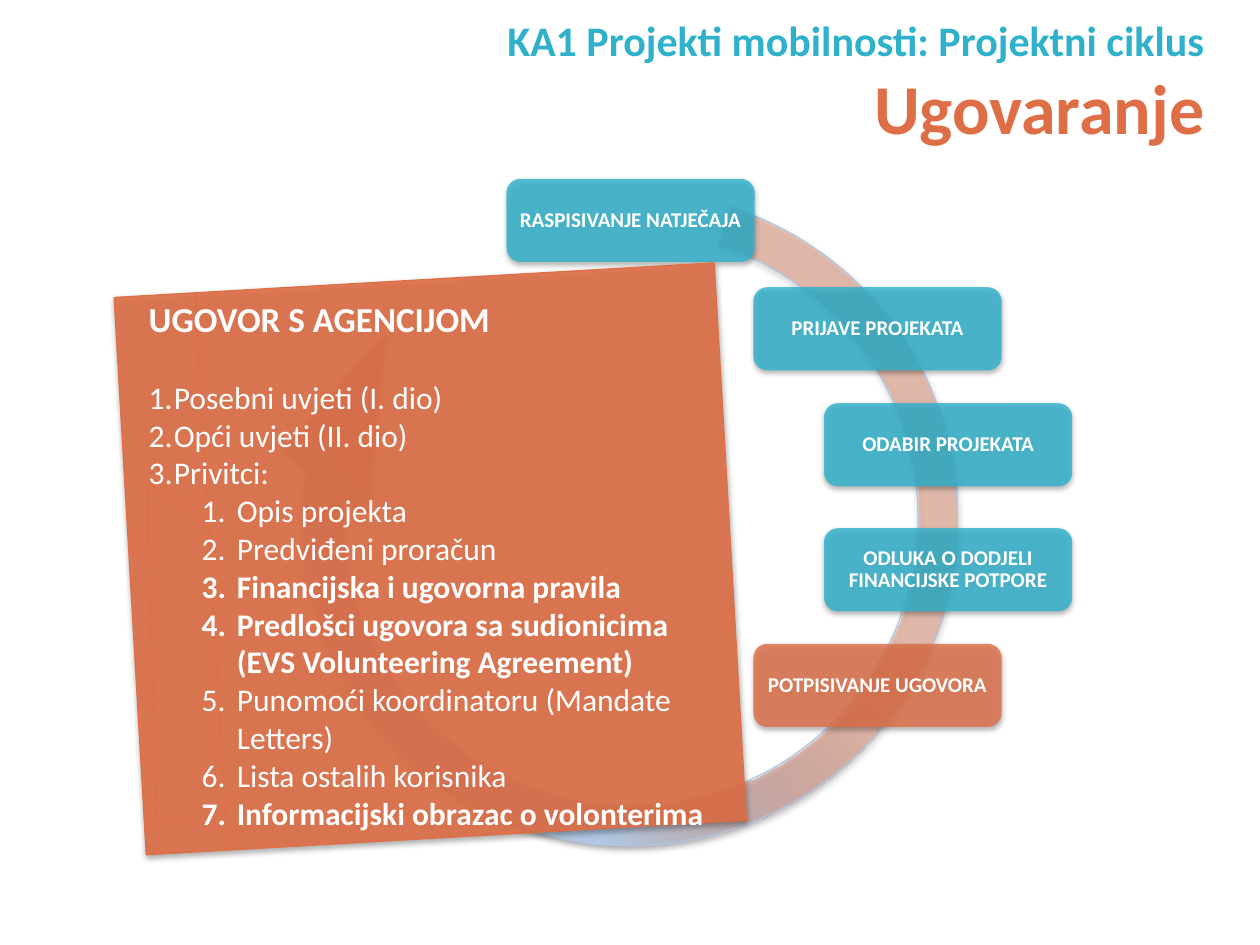
from dataclasses import dataclass

from lxml import etree
from pptx import Presentation
from pptx.dml.color import RGBColor
from pptx.enum.shapes import MSO_SHAPE
from pptx.enum.text import MSO_ANCHOR, MSO_AUTO_SIZE, PP_ALIGN
from pptx.oxml import parse_xml
from pptx.oxml.ns import nsdecls, qn
from pptx.util import Inches, Pt

ROUNDED = MSO_SHAPE.ROUNDED_RECTANGLE
CIRCULAR_ARROW = MSO_SHAPE.CIRCULAR_ARROW
CALLOUT = MSO_SHAPE.LINE_CALLOUT_3_BORDER_AND_ACCENT_BAR
TOP, MIDDLE, BOTTOM = MSO_ANCHOR.TOP, MSO_ANCHOR.MIDDLE, MSO_ANCHOR.BOTTOM
CENTER, LEFT, RIGHT = PP_ALIGN.CENTER, PP_ALIGN.LEFT, PP_ALIGN.RIGHT
GROW = MSO_AUTO_SIZE.SHAPE_TO_FIT_TEXT

SLIDE_W, SLIDE_H = Inches(10), Inches(7.5)


@dataclass(frozen=True)
class Theme:
    font: str = "Calibri"
    teal: str = "2FB1CC"
    orange: str = "DE6E46"
    blue: str = "B0C6E1"
    pale_blue: str = "CAD9EB"
    white: str = "FFFFFF"
    overline: int = 24
    title: int = 40
    step: int = 12
    heading: int = 20
    item: int = 18


THEME = Theme()

# Steps of the cycle: left and top in percent of the slide, text, colour
STEP_SIZE = (19.7, 8.8)
STEPS = [
    (40.2, 18.93, "RASPISIVANJE NATJEČAJA", THEME.teal),
    (59.8, 30.4, "PRIJAVE PROJEKATA", THEME.teal),
    (65.4, 42.67, "ODABIR PROJEKATA", THEME.teal),
    (65.4, 55.9, "ODLUKA O DODJELI FINANCIJSKE POTPORE", THEME.teal),
    (59.8, 68.13, "POTPISIVANJE UGOVORA", THEME.orange),
]

# Contract parts: level, text, bold
CONTRACT_PARTS = [
    (0, "Posebni uvjeti (I. dio)", False),
    (0, "Opći uvjeti (II. dio)", False),
    (0, "Privitci:", False),
    (1, "Opis projekta", False),
    (1, "Predviđeni proračun", False),
    (1, "Financijska i ugovorna pravila", True),
    (1, "Predlošci ugovora sa sudionicima (EVS Volunteering Agreement)", True),
    (1, "Punomoći koordinatoru (Mandate Letters)", False),
    (1, "Lista ostalih korisnika", False),
    (1, "Informacijski obrazac o volonterima", True),
]


def frame(left, top, width, height):
    """Turn percentages of the slide into lengths."""
    return (int(SLIDE_W * left / 100), int(SLIDE_H * top / 100),
            int(SLIDE_W * width / 100), int(SLIDE_H * height / 100))


def move(placeholder, box):
    placeholder.left, placeholder.top, placeholder.width, placeholder.height = box


def add_run(paragraph, text, size, color, bold=True):
    run = paragraph.add_run()
    run.text = text
    run.font.name = THEME.font
    run.font.size = Pt(size)
    run.font.bold = bold
    run.font.color.rgb = RGBColor.from_string(color)


def add_shadow(shape):
    shape.shadow.inherit = False
    effects = shape.element.spPr.find(qn("a:effectLst"))
    effects.append(parse_xml(
        f'<a:outerShdw {nsdecls("a")} blurRad="{Pt(3.1)}" dist="{Pt(1.8)}" '
        'dir="5400000" rotWithShape="0"><a:srgbClr val="000000">'
        '<a:alpha val="35000"/></a:srgbClr></a:outerShdw>'))


def fill_translucent(shape, color, opacity):
    shape.fill.solid()
    shape.fill.fore_color.rgb = RGBColor.from_string(color)
    rgb = shape.element.spPr.find(qn("a:solidFill")).find(qn("a:srgbClr"))
    etree.SubElement(rgb, qn("a:alpha")).set("val", str(opacity * 1000))


def outline(shape, color):
    shape.line.color.rgb = RGBColor.from_string(color)
    shape.line.width = Pt(0.75)


def add_adjusted(slide, preset, box, rotation, adjustments):
    shape = slide.shapes.add_shape(preset, *box)
    shape.rotation = rotation
    for index, value in enumerate(adjustments):
        shape.adjustments[index] = value
    return shape


def add_cycle_arrow(slide):
    arrow = add_adjusted(slide, CIRCULAR_ARROW, frame(21.5, 16.8, 57.1, 76.13),
                         307.9, (0.055, 18.026, 143.539, 203.969, 0.073))
    stops = [(47, THEME.orange, 34), (67, THEME.blue, 100),
             (83, THEME.blue, 100), (100, THEME.pale_blue, 100)]
    stop_xml = "".join(
        f'<a:gs pos="{pos * 1000}"><a:srgbClr val="{color}">'
        f'<a:alpha val="{opacity * 1000}"/></a:srgbClr></a:gs>'
        for pos, color, opacity in stops)
    geometry = arrow.element.spPr.find(qn("a:prstGeom"))
    geometry.addnext(parse_xml(
        f'<a:gradFill {nsdecls("a")} rotWithShape="1"><a:gsLst>{stop_xml}</a:gsLst>'
        '<a:path path="circle"><a:fillToRect l="100000" b="100000"/></a:path>'
        '</a:gradFill>'))
    outline(arrow, THEME.blue)
    add_shadow(arrow)


def add_step(slide, left, top, text, color):
    step = slide.shapes.add_shape(ROUNDED, *frame(left, top, *STEP_SIZE))
    fill_translucent(step, color, 81)
    step.line.fill.background()
    add_shadow(step)
    label = step.text_frame
    label.word_wrap = True
    label.vertical_anchor = MIDDLE
    label.margin_left = label.margin_right = Inches(0.04)
    label.margin_top = label.margin_bottom = Inches(0.04)
    paragraph = label.paragraphs[0]
    paragraph.alignment = CENTER
    paragraph.line_spacing = 0.9
    add_run(paragraph, text, THEME.step, THEME.white)


def add_contract_panel(slide):
    panel = add_adjusted(slide, CALLOUT, frame(10.3, 29.6, 47.7, 59.07), 356.7,
                         (0.402, 0.135, 0.335, 0.037, 0.947, 0.02, 0.933, 0.077))
    fill_translucent(panel, THEME.orange, 90)
    outline(panel, THEME.orange)
    add_shadow(panel)


def set_title(title):
    move(title, frame(24, 0.67, 72.6, 15.73))
    text = title.text_frame
    text.vertical_anchor = BOTTOM
    text.auto_size = GROW
    overline, heading = text.paragraphs[0], text.add_paragraph()
    overline.alignment = heading.alignment = RIGHT
    add_run(overline, "KA1 Projekti mobilnosti: Projektni ciklus",
            THEME.overline, THEME.teal)
    add_run(heading, "Ugovaranje", THEME.title, THEME.orange)


def set_list_style(paragraph, margin, numbered, before=0):
    paragraph.alignment = LEFT
    paragraph.space_before = Pt(before)
    properties = paragraph.element.get_or_add_pPr() if hasattr(
        paragraph, "element") else paragraph._p.get_or_add_pPr()
    properties.set("marL", str(Inches(margin)))
    properties.set("indent", str(Inches(-0.28 if numbered else 0)))
    if numbered:
        etree.SubElement(properties, qn("a:buFont")).set("typeface", "+mj-lt")
        etree.SubElement(properties, qn("a:buAutoNum")).set("type", "arabicPeriod")
    else:
        etree.SubElement(properties, qn("a:buNone"))


def set_contract_list(body):
    move(body, frame(10.8, 30.8, 48.4, 58.4))
    body.element.getparent().append(body.element)  # in front of the panel
    text = body.text_frame
    text.vertical_anchor = TOP
    text.auto_size = GROW
    heading = text.paragraphs[0]
    set_list_style(heading, 0, numbered=False)
    add_run(heading, "UGOVOR S AGENCIJOM", THEME.heading, THEME.white)
    for index, (level, part, bold) in enumerate(CONTRACT_PARTS):
        item = text.add_paragraph()
        item.level = level
        set_list_style(item, 0.2 + 0.5 * level, numbered=True,
                       before=22 if index == 0 else 0)
        add_run(item, part, THEME.item, THEME.white, bold)


def main():
    deck = Presentation()
    deck.slide_width, deck.slide_height = SLIDE_W, SLIDE_H
    slide = deck.slides.add_slide(deck.slide_layouts[1])
    set_title(slide.shapes.title)

    # Project cycle
    add_cycle_arrow(slide)
    for step in STEPS:
        add_step(slide, *step)

    # Contract with the agency
    add_contract_panel(slide)
    set_contract_list(slide.placeholders[1])
    deck.save("out.pptx")


if __name__ == "__main__":
    main()
